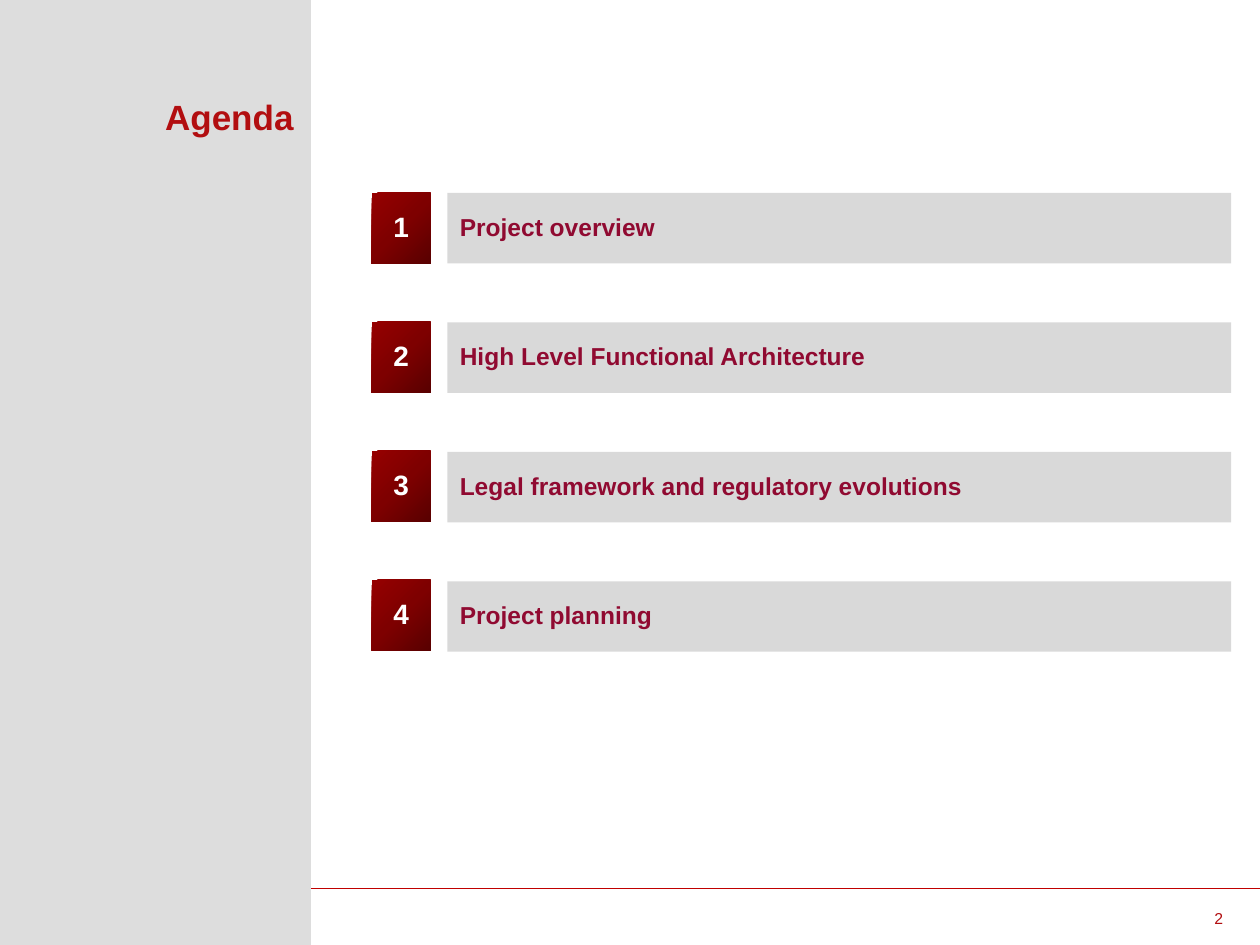
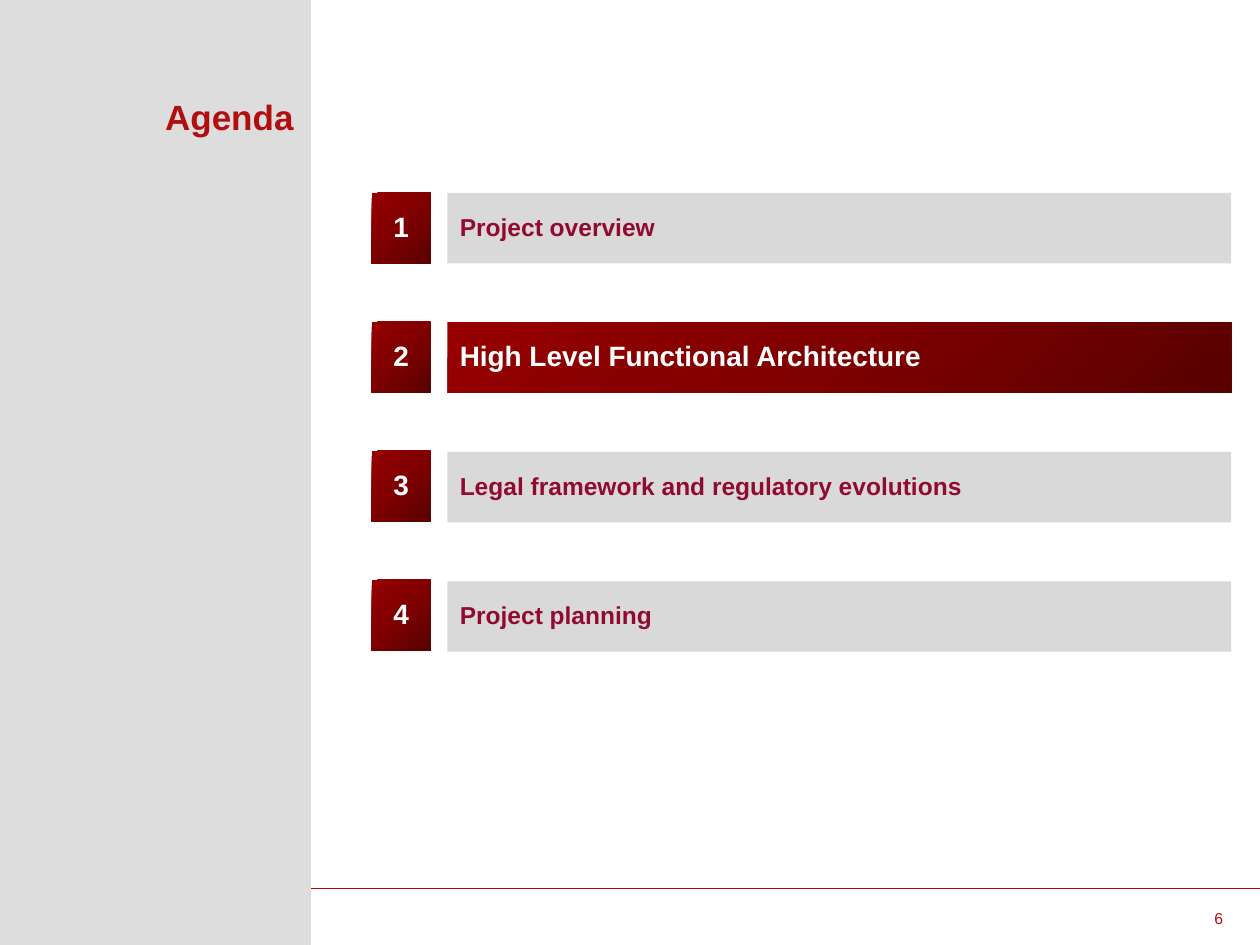
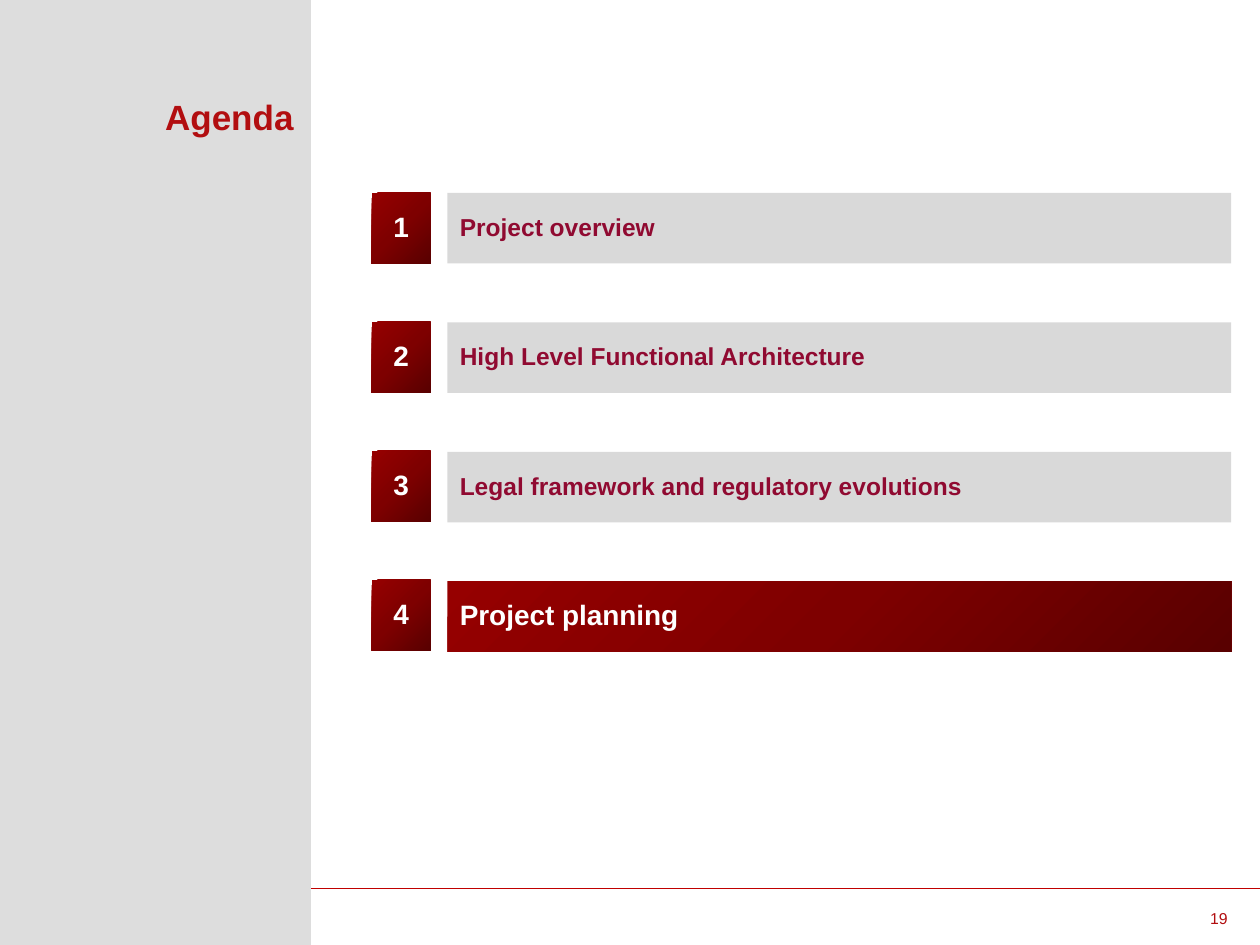
from dataclasses import dataclass
from typing import Any, NamedTuple

import pptx
import pptx.dml.color
import pptx.enum.shapes
import pptx.enum.text
import pptx.oxml
import pptx.oxml.ns
import pptx.util

Cm = pptx.util.Cm
Align = pptx.enum.text.PP_ALIGN
Anchor = pptx.enum.text.MSO_ANCHOR
Kind = pptx.enum.shapes.MSO_SHAPE


@dataclass(frozen=True)
class Theme:
    font: str = "Arial"
    band: str = "DDDDDD"
    rule: str = "C00000"
    head: str = "B20E10"
    bar: str = "D9D9D9"
    text: str = "900A31"
    light: str = "FFFFFF"
    glow: tuple[str, ...] = ("590000", "7E0000", "960000")
    big: int = 20
    strong: int = 16
    body: int = 14
    small: int = 9


class Box(NamedTuple):
    left: float
    top: float
    width: float
    height: float

    def down(self, gap: float) -> "Box":
        return self._replace(top=self.top + gap)

    def size(self) -> dict[str, Any]:
        return {name: Cm(value) for name, value in self._asdict().items()}


class Look(NamedTuple):
    size: int
    color: str
    bold: bool = True
    align: Any = Align.LEFT
    anchor: Any = Anchor.MIDDLE
    space: float = 0.9
    wrap: bool = True
    inset: tuple[float, float, float, float] = (0.25, 0.13, 0.25, 0.13)


class Page(NamedTuple):
    number: int
    active: int = 0


THEME = Theme()
TITLE = Look(THEME.big, THEME.head, align=Align.RIGHT, anchor=Anchor.TOP, inset=(0, 0.13, 0, 0))
BADGE = Look(THEME.strong, THEME.light, align=Align.CENTER, wrap=False)
PLAIN = Look(THEME.body, THEME.text)
ACTIVE = Look(THEME.strong, THEME.light)
FOOT = Look(THEME.small, THEME.head, False, Align.CENTER, space=1.0, wrap=False, inset=(0.1,) * 4)

WIDTH, HEIGHT = 25.4, 19.05
BAND = Box(0, 0, 6.27, HEIGHT)
RULE_TOP = 17.91
HEAD_BOX = Box(0.2, 1.9, 5.72, 2.21)
FOOT_BOX = Box(24.1, 18.26, 0.94, 0.51)
BADGE_BOX = Box(7.49, 3.89, 1.19, 1.42)
BAR_BOX = Box(9.02, 3.89, 15.8, 1.42)
BADGE_STEP, BAR_STEP = 2.6, 2.61

TOPICS = (
    "Project overview",
    "High Level Functional Architecture",
    "Legal framework and regulatory evolutions",
    "Project planning",
)
PAGES = (Page(2), Page(6, 2), Page(19, 4))


def apply(target: Any, values: dict[str, Any]) -> None:
    for name, value in values.items():
        setattr(target, name, value)


def rgb(code: str) -> pptx.dml.color.RGBColor:
    return pptx.dml.color.RGBColor.from_string(code)


def write(shape: Any, text: str, look: Look) -> None:
    frame = shape.text_frame
    frame.text = text
    sides = ("margin_left", "margin_top", "margin_right", "margin_bottom")
    apply(frame, {
        "auto_size": pptx.enum.text.MSO_AUTO_SIZE.NONE,
        "word_wrap": look.wrap,
        "vertical_anchor": look.anchor,
        **{side: Cm(gap) for side, gap in zip(sides, look.inset)},
    })
    para = frame.paragraphs[0]
    apply(para, {"alignment": look.align, "line_spacing": look.space})
    font = para.runs[0].font
    apply(font, {"name": THEME.font, "size": pptx.util.Pt(look.size), "bold": look.bold})
    font.color.rgb = rgb(look.color)


def add_rect(slide: Any, box: Box, fill: str) -> Any:
    shape = slide.shapes.add_shape(Kind.RECTANGLE, **box.size())
    shape.shadow.inherit = False
    shape.line.fill.background()
    shape.fill.solid()
    shape.fill.fore_color.rgb = rgb(fill)
    return shape


def add_glow(slide: Any, box: Box) -> Any:
    shape = add_rect(slide, box, THEME.glow[0])
    stops = "".join(
        f'<a:gs pos="{step * 50000}"><a:srgbClr val="{code}"/></a:gs>'
        for step, code in enumerate(THEME.glow)
    )
    grad = pptx.oxml.parse_xml(
        f'<a:gradFill {pptx.oxml.ns.nsdecls("a")} rotWithShape="1"><a:gsLst>{stops}</a:gsLst>'
        '<a:path path="circle"><a:fillToRect l="100000" t="100000"/></a:path></a:gradFill>'
    )
    props = shape.element.spPr
    props.replace(props.find(pptx.oxml.ns.qn("a:solidFill")), grad)
    return shape


def set_frame(slide: Any) -> None:
    layout = slide.slide_layout
    for holder in list(layout.placeholders)[1:]:
        layout.shapes.element.remove(holder.element)
    band = add_rect(slide, BAND, THEME.band)
    rule = slide.shapes.add_connector(
        pptx.enum.shapes.MSO_CONNECTOR.STRAIGHT,
        Cm(BAND.width), Cm(RULE_TOP), Cm(WIDTH), Cm(RULE_TOP),
    )
    rule.line.width = pptx.util.Pt(1)
    rule.line.color.rgb = rgb(THEME.rule)
    rule.element.spPr.append(
        pptx.oxml.parse_xml(f'<a:effectLst {pptx.oxml.ns.nsdecls("a")}/>')
    )
    for part in (band, rule):
        layout.shapes.element.append(part.element)


def add_topic(slide: Any, index: int, topic: str, active: bool) -> None:
    box = BAR_BOX.down(index * BAR_STEP)
    bar = add_glow(slide, box) if active else add_rect(slide, box, THEME.bar)
    write(bar, topic, ACTIVE if active else PLAIN)
    badge = add_glow(slide, BADGE_BOX.down(index * BADGE_STEP))
    write(badge, str(index + 1), BADGE)


def fill_page(slide: Any, page: Page) -> None:
    title = slide.shapes.title
    apply(title, HEAD_BOX.size())
    write(title, "Agenda", TITLE)
    write(slide.shapes.add_textbox(**FOOT_BOX.size()), str(page.number), FOOT)
    for index, topic in enumerate(TOPICS):
        add_topic(slide, index, topic, index + 1 == page.active)


def main() -> None:
    deck = pptx.Presentation()
    apply(deck, {"slide_width": Cm(WIDTH), "slide_height": Cm(HEIGHT)})
    layout = deck.slide_layouts.get_by_name("Title Only")
    slides = [deck.slides.add_slide(layout) for _ in PAGES]
    set_frame(slides[0])
    for slide, page in zip(slides, PAGES):
        fill_page(slide, page)
    deck.save("out.pptx")


if __name__ == "__main__":
    main()
